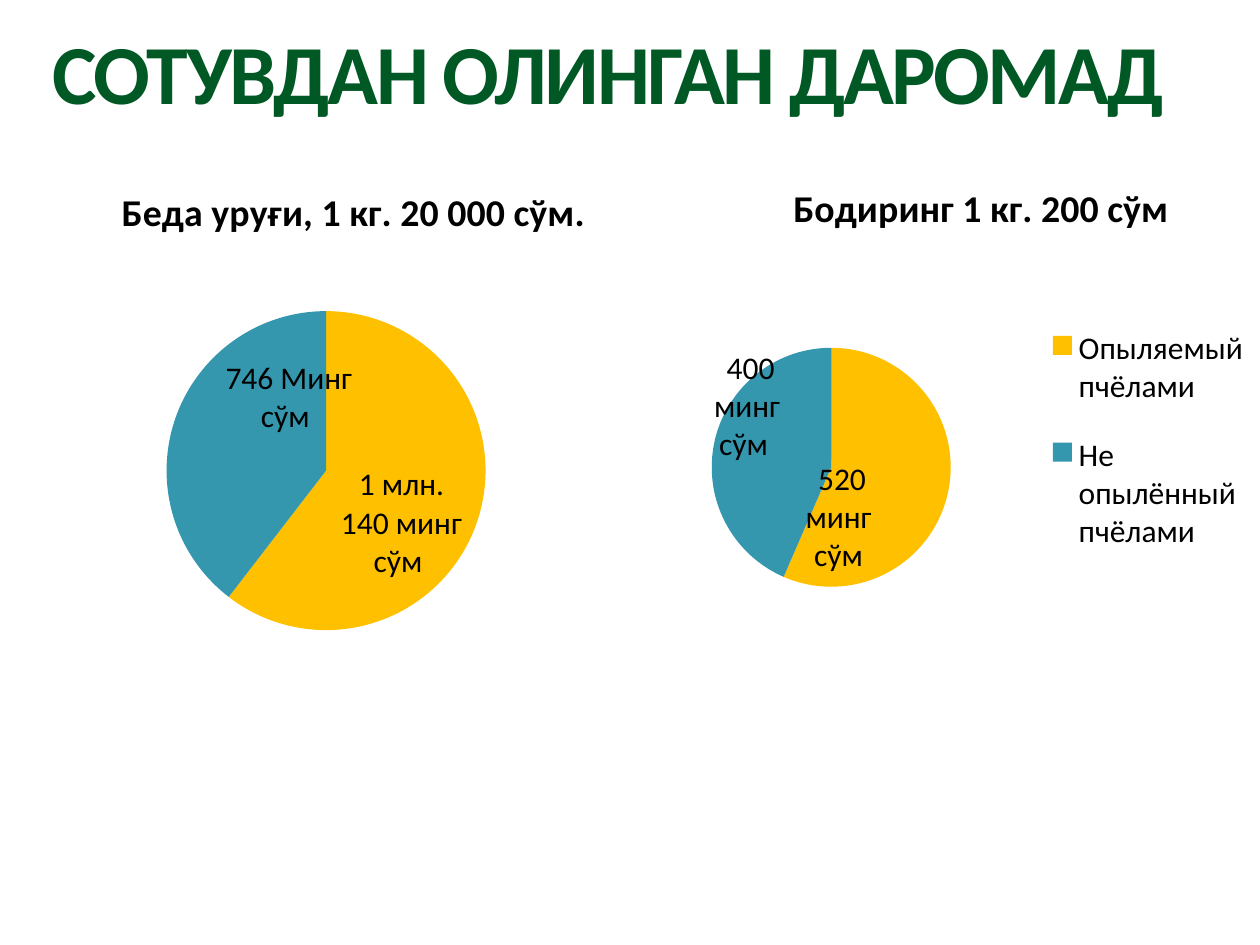
from dataclasses import dataclass
from typing import Optional

import pptx
import pptx.chart.data
import pptx.dml.color
import pptx.enum.chart
import pptx.enum.text
import pptx.oxml
import pptx.oxml.ns
import pptx.util
from pptx.util import Cm, Pt

FONT = "Calibri"
BLACK = "000000"
GREEN = "005825"
SLICE_COLORS = ("FFC000", "3497AE")
SUM_FORMAT = r"_-* #,##0.00\ [$UZS]_-;\-* #,##0.00\ [$UZS]_-"


@dataclass
class SliceLabel:
    text: str
    shift: tuple[float, float]


@dataclass
class IncomePie:
    title: str
    box: tuple[float, float, float, float]
    categories: tuple[str, str]
    incomes: tuple[int, int]
    labels: tuple[SliceLabel, SliceLabel]
    title_at: tuple[float, float]
    plot_area: tuple[float, float, float, float]
    legend_area: Optional[tuple[float, float, float, float]] = None


PIES = (
    IncomePie(
        "Беда уруғи, 1 кг. 20 000 сўм.", (0.64, 3.38, 12.9, 10.72),
        ("1", "2"), (1140000, 746000),
        (SliceLabel("1 млн. 140 минг сўм ", (0, 0.05)),
         SliceLabel("746 Минг сўм ", (0.06, -0.09))),
        (0.13, 0.02), (0.21, 0.27, 0.5, 0.6),
    ),
    IncomePie(
        "Бодиринг 1 кг. 200 сўм", (12.5, 3.18, 12.9, 10.95),
        ("Опыляемый пчёлами", "Не опылённый пчёлами "), (520000, 400000),
        (SliceLabel(" 520 минг сўм", (-0.08, 0.07)),
         SliceLabel(" 400 минг сўм ", (-0.04, -0.09))),
        (0.26, 0.03), (0.14, 0.35, 0.38, 0.44), (0.66, 0.26, 0.33, 0.52),
    ),
)


def rgb(color: str) -> pptx.dml.color.RGBColor:
    return pptx.dml.color.RGBColor.from_string(color)


def style_font(font, size: float, color: str = BLACK, bold: bool = False) -> None:
    font.name = FONT
    font.size = Pt(size)
    font.bold = bold
    font.color.rgb = rgb(color)


def set_layout(parent, position: tuple[float, ...], after: Optional[str] = None,
               edge: bool = True, inner: bool = False) -> None:
    """Place a chart part by fractions of the chart, after the named child."""
    qn = pptx.oxml.ns.qn
    for old in parent.findall(qn("c:layout")):
        parent.remove(old)
    settings = '<c:layoutTarget val="inner"/>' if inner else ""
    if edge:
        settings += '<c:xMode val="edge"/><c:yMode val="edge"/>'
    settings += "".join(f'<c:{key} val="{value}"/>' for key, value in zip("xywh", position))
    layout = pptx.oxml.parse_xml(
        f'<c:layout {pptx.oxml.ns.nsdecls("c")}><c:manualLayout>{settings}'
        "</c:manualLayout></c:layout>")
    index = 0 if after is None else parent.index(parent.find(qn(after))) + 1
    parent.insert(index, layout)


def label_slice(point, label: SliceLabel) -> None:
    data_label = point.data_label
    paragraph = data_label.text_frame.paragraphs[0]
    run = paragraph.add_run()
    run.text = label.text
    style_font(run.font, 18)
    data_label.position = pptx.enum.chart.XL_LABEL_POSITION.CENTER
    # The paragraph sits three levels below the label element
    label_element = paragraph._p.getparent().getparent().getparent()
    set_layout(label_element, label.shift, after="c:idx", edge=False)


def add_income_pie(slide, pie: IncomePie) -> None:
    data = pptx.chart.data.CategoryChartData()
    data.categories = pie.categories
    data.add_series("Series 1", pie.incomes)
    chart = slide.shapes.add_chart(
        pptx.enum.chart.XL_CHART_TYPE.PIE, *map(Cm, pie.box), data).chart
    style_font(chart.font, 18)

    chart.has_title = True
    heading = chart.chart_title.text_frame.paragraphs[0].add_run()
    heading.text = pie.title
    style_font(heading.font, 21.6, bold=True)
    chart.chart_title.include_in_layout = False
    set_layout(chart.chart_title._element, pie.title_at, after="c:tx")

    plot = chart.plots[0]
    plot.vary_by_categories = True
    set_layout(chart._chartSpace.chart.plotArea, pie.plot_area, inner=True)
    income = plot.series[0]
    income.data_labels.show_value = True
    income.data_labels.number_format = SUM_FORMAT
    income.data_labels.number_format_is_linked = False
    style_font(income.data_labels.font, 18, bold=True)
    for index, (color, label) in enumerate(zip(SLICE_COLORS, pie.labels)):
        point = income.points[index]
        point.format.fill.solid()
        point.format.fill.fore_color.rgb = rgb(color)
        point.format.line.fill.background()
        label_slice(point, label)

    chart.has_legend = pie.legend_area is not None
    if pie.legend_area:
        chart.legend.position = pptx.enum.chart.XL_LEGEND_POSITION.RIGHT
        chart.legend.include_in_layout = False
        style_font(chart.legend.font, 18)
        set_layout(chart.legend._element, pie.legend_area, after="c:legendPos")


def write_title(slide, text: str) -> None:
    title = slide.shapes.title
    title.left, title.top, title.width, title.height = map(Cm, (1.05, 0.64, 23.29, 1.85))
    frame = title.text_frame
    frame.margin_left = frame.margin_right = frame.margin_top = frame.margin_bottom = 0
    frame.word_wrap = True
    frame.vertical_anchor = pptx.enum.text.MSO_ANCHOR.MIDDLE
    paragraph = frame.paragraphs[0]
    paragraph.alignment = pptx.enum.text.PP_ALIGN.LEFT
    paragraph.line_spacing = 0.9
    run = paragraph.add_run()
    run.text = text
    style_font(run.font, 48, GREEN, bold=True)
    run._r.get_or_add_rPr().set("spc", "-150")


def main() -> None:
    deck = pptx.Presentation()
    deck.slide_width, deck.slide_height = Cm(25.4), Cm(19.05)
    slide = deck.slides.add_slide(deck.slide_layouts.get_by_name("Title Only"))
    write_title(slide, "СОТУВДАН ОЛИНГАН ДАРОМАД")
    for pie in PIES:
        add_income_pie(slide, pie)
    deck.save("out.pptx")


if __name__ == "__main__":
    main()
